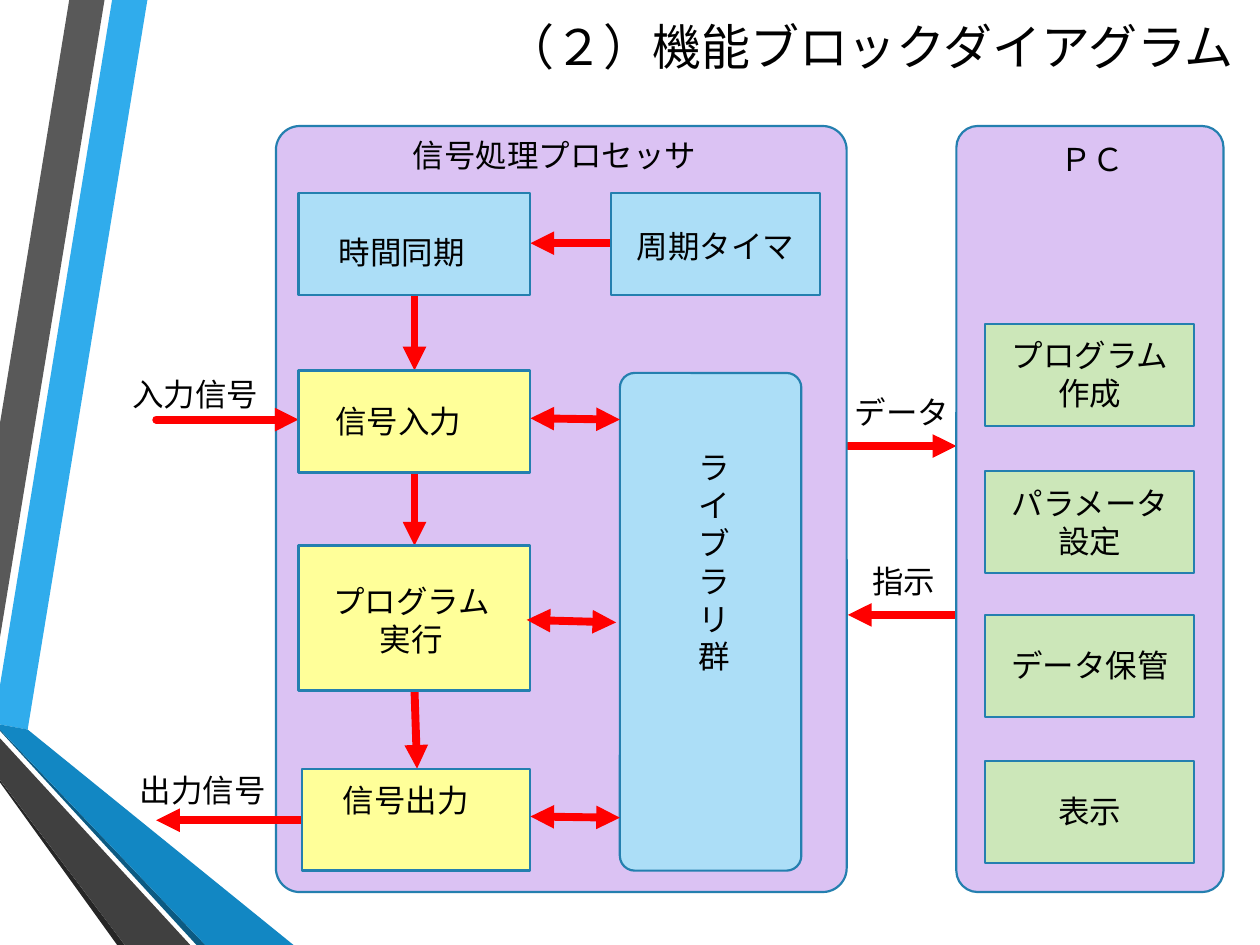
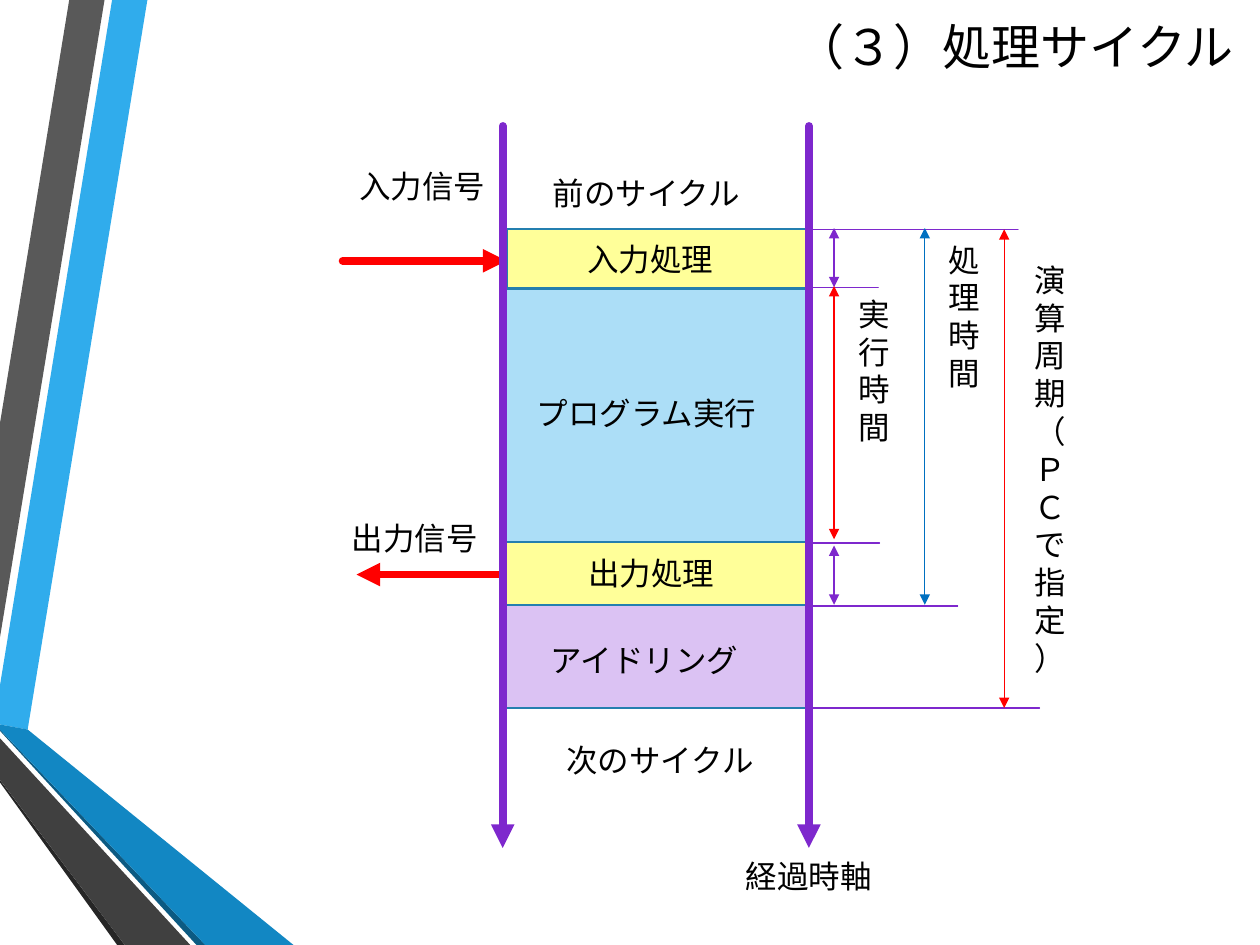
from lxml.etree import SubElement
from pptx import Presentation
from pptx.dml.color import RGBColor
from pptx.enum.shapes import MSO_CONNECTOR, MSO_SHAPE
from pptx.enum.text import MSO_ANCHOR, MSO_AUTO_SIZE, PP_ALIGN
from pptx.oxml.ns import qn
from pptx.util import Pt

PX = 9144  # EMU per px, 100 px to the inch
SLIDE_WIDTH, SLIDE_HEIGHT = 1000, 750
TITLE_ONLY = 5

COLORS = {
    "text": "000000", "outline": "247FAF", "panel": "DBC2F3", "blue": "ACDEF7",
    "yellow": "FFFF99", "green": "CCE7B9", "red": "FF0000", "purple": "7E28CD",
    "deep blue": "0070C0", "ribbon sky": "30ACEC", "ribbon gray": "595959",
    "ribbon black": "262626", "ribbon navy": "0C5A82", "ribbon blue": "1287C3",
    "ribbon dark": "404040",
}

# Folded ribbons on the left edge of every slide
RIBBONS = [
    ("ribbon sky", [(0, 544), (0, 575), (22, 579), (117, 0), (89, 0)]),
    ("ribbon gray", [(83, 0), (55, 0), (0, 336), (0, 506)]),
    ("ribbon black", [(0, 619), (0, 621), (93, 750), (99, 750)]),
    ("ribbon navy", [(0, 579), (0, 580), (156, 750), (163, 750)]),
    ("ribbon blue", [(0, 579), (163, 750), (233, 750), (22, 579), (0, 575)]),
    ("ribbon dark", [(0, 619), (99, 750), (151, 750), (0, 586)]),
]


def rgb(name):
    return RGBColor.from_string(COLORS[name])


def emu(*lengths):
    return [length * PX for length in lengths]


def write_text(frame, text, *, font="Times New Roman", size=18, color="text",
               align=PP_ALIGN.CENTER, anchor=MSO_ANCHOR.TOP,
               fit=MSO_AUTO_SIZE.SHAPE_TO_FIT_TEXT):
    frame.word_wrap = True
    frame.auto_size = fit
    frame.vertical_anchor = anchor
    para = frame.paragraphs[0]
    para.alignment = align
    span = para.add_run()
    span.text = text
    span.font.name = font
    span.font.size = Pt(size)
    span.font.color.rgb = rgb(color)


class Diagram:
    """Holds the deck and the slide being drawn."""

    def __init__(self):
        self.deck = Presentation()
        self.deck.slide_width, self.deck.slide_height = emu(SLIDE_WIDTH, SLIDE_HEIGHT)
        self.page = None

    def new_page(self, heading):
        self.page = self.deck.slides.add_slide(self.deck.slide_layouts[TITLE_ONLY])
        for color, points in RIBBONS:
            self.ribbon(color, points)
        title = self.page.shapes.title
        title.left, title.top, title.width, title.height = emu(146, 2, 843, 69)
        write_text(title.text_frame, heading, font="Cabin", size=28,
                   align=PP_ALIGN.RIGHT, anchor=MSO_ANCHOR.MIDDLE,
                   fit=MSO_AUTO_SIZE.NONE)

    def ribbon(self, color, points):
        builder = self.page.shapes.build_freeform(*points[0], scale=PX)
        builder.add_line_segments(points[1:], close=True)
        shape = builder.convert_to_shape()
        shape.shadow.inherit = False
        shape.fill.solid()
        shape.fill.fore_color.rgb = rgb(color)
        shape.line.fill.background()

    def box(self, color, left, top, width, height, rounding=None):
        kind = MSO_SHAPE.RECTANGLE if rounding is None else MSO_SHAPE.ROUNDED_RECTANGLE
        shape = self.page.shapes.add_shape(kind, *emu(left, top, width, height))
        if rounding is not None:
            shape.adjustments[0] = rounding
        shape.shadow.inherit = False
        shape.fill.solid()
        shape.fill.fore_color.rgb = rgb(color)
        shape.line.color.rgb = rgb("outline")
        shape.line.width = Pt(1.25)

    def label(self, text, left, top, width, height=40, stacked=False):
        box = self.page.shapes.add_textbox(*emu(left, top, width, height))
        write_text(box.text_frame, text)
        if stacked:
            box.text_frame.paragraphs[0]
            box.element.txBody.find(qn("a:bodyPr")).set("vert", "wordArtVertRtl")

    def line(self, start, end, color="red", width=4.5, heads=("tailEnd",)):
        connector = self.page.shapes.add_connector(
            MSO_CONNECTOR.STRAIGHT, *emu(*start, *end))
        connector.line.color.rgb = rgb(color)
        connector.line.width = Pt(width)
        outline = connector.get_or_add_ln()
        outline.set("cap", "rnd")
        for head in heads:
            SubElement(outline, qn(f"a:{head}"), type="triangle")
        SubElement(connector.element.spPr, qn("a:effectLst"))

    def two_way(self, start, end, **style):
        self.line(start, end, heads=("headEnd", "tailEnd"), **style)


def draw_block_diagram(diagram):
    diagram.new_page("（２）機能ブロックダイアグラム")

    # Traffic between the two panels
    diagram.line((673, 354), (759, 354))
    diagram.line((759, 488), (673, 488))
    diagram.box("panel", 219, 100, 453, 608, rounding=0.042)
    diagram.box("panel", 759, 100, 212, 608, rounding=0.08)

    # Flow into, through and out of the processor
    for start, end in [((485, 193), (421, 193)), ((124, 333), (237, 333)),
                       ((240, 651), (124, 651)), ((329, 234), (329, 294)),
                       ((329, 374), (329, 433)), ((329, 548), (331, 610))]:
        diagram.line(start, end)

    # Processor blocks, each with the place of its label
    blocks = [
        ("時間同期", "blue", (237, 153, 184, 81), (251, 180, 136)),
        ("周期タイマ", "blue", (485, 153, 166, 81), (492, 175, 152)),
        ("信号入力", "yellow", (237, 294, 184, 81), (248, 314, 136)),
        ("プログラム実行", "yellow", (237, 433, 184, 115), (248, 457, 157, 71)),
        ("信号出力", "yellow", (240, 610, 181, 81), (254, 615, 136)),
    ]
    for text, color, area, place in blocks:
        diagram.box(color, *area)
        diagram.label(text, *place)

    # PC functions, labels centred in their boxes
    functions = [("プログラム作成", 257, 71), ("パラメータ設定", 374, 71),
                 ("データ保管", 488, 40), ("表示", 604, 40)]
    for text, top, height in functions:
        diagram.box("green", 782, top, 166, 81)
        diagram.label(text, 789, top + (81 - height) // 2, 152, height)

    # Panel headings and signal names
    for text, *place in [("入力信号", 79, 293, 152), ("出力信号", 85, 607, 152),
                         ("データ", 656, 307, 120), ("指示", 676, 441, 83),
                         ("ＰＣ", 807, 106, 120),
                         ("信号処理プロセッサ", 316, 103, 248)]:
        diagram.label(text, *place)

    # Library block and its links
    diagram.box("blue", 492, 296, 144, 395, rounding=0.082)
    for left, top, drop in [(421, 332, 1), (418, 492, 2), (421, 648, 1)]:
        diagram.two_way((left, top), (left + 71, top + drop))
    diagram.label("ライブラリ群", 540, 351, 53, 261, stacked=True)


def draw_cycle(diagram):
    diagram.new_page("（３）処理サイクル")

    # Signals
    diagram.line((272, 207), (402, 207))
    diagram.line((399, 456), (283, 456))

    # Phases of one cycle
    for color, left, top, height in [("yellow", 402, 182, 50), ("blue", 401, 229, 201),
                                     ("yellow", 401, 430, 50), ("panel", 401, 480, 82)]:
        diagram.box(color, left, top, 241, height)
    for text, *place in [("前のサイクル", 415, 133, 196), ("入力処理", 440, 186, 152),
                         ("出力処理", 449, 435, 136), ("アイドリング", 413, 504, 197),
                         ("次のサイクル", 431, 583, 186), ("入力信号", 259, 128, 152),
                         ("出力信号", 253, 407, 152), ("経過時軸", 550, 675, 184),
                         ("プログラム実行", 404, 308, 218)]:
        diagram.label(text, *place)

    # Time axes
    for x in (399, 642):
        diagram.line((x, 100), (x, 673), color="purple")

    # Guide lines
    for left, right, y in [(642, 808, 182), (642, 697, 228), (642, 760, 481),
                           (643, 698, 431), (640, 825, 562)]:
        diagram.line((left, y), (right, y), color="purple", width=0.75, heads=())

    # Durations
    for x, top, bottom, color in [(662, 181, 228, "purple"), (662, 433, 480, "purple"),
                                  (662, 227, 428, "red"), (734, 181, 480, "deep blue"),
                                  (797, 182, 562, "red")]:
        diagram.two_way((x, top), (x, bottom), color=color, width=0.75)
    for text, left, top, height in [("実行時間", 667, 229, 198), ("処理時間", 739, 186, 289),
                                    ("演算周期（ＰＣで指定）", 807, 202, 352)]:
        diagram.label(text, left, top, 53, height, stacked=True)


def main():
    diagram = Diagram()
    draw_block_diagram(diagram)
    draw_cycle(diagram)
    diagram.deck.save("out.pptx")


if __name__ == "__main__":
    main()
